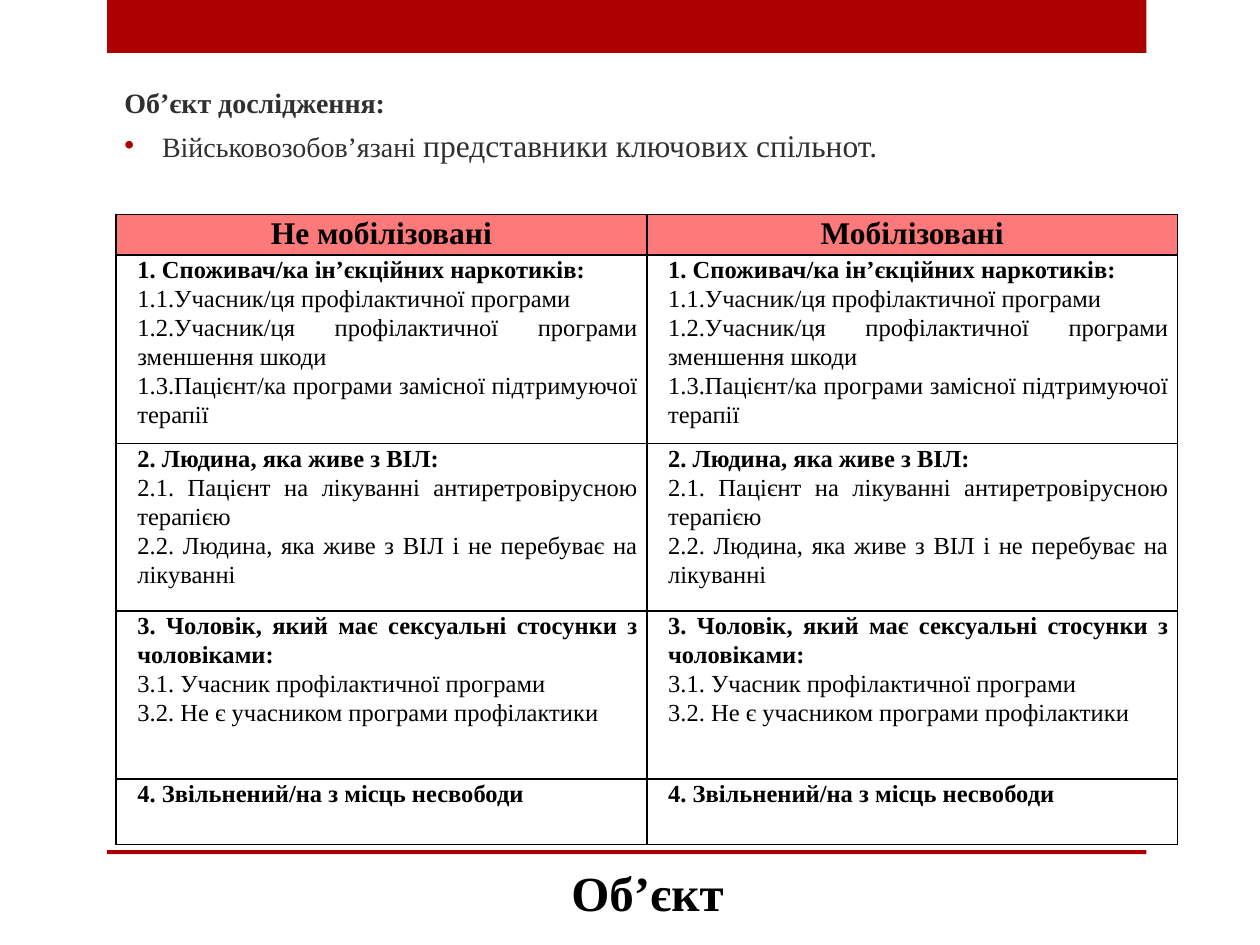
from typing import NamedTuple

from lxml import etree
from pptx import Presentation
from pptx.dml.color import RGBColor
from pptx.enum.shapes import MSO_SHAPE
from pptx.enum.text import MSO_ANCHOR, PP_ALIGN
from pptx.oxml.ns import qn
from pptx.util import Cm, Pt

RECT = MSO_SHAPE.RECTANGLE
MID, LOW = MSO_ANCHOR.MIDDLE, MSO_ANCHOR.BOTTOM
MITTE, BLOCK = PP_ALIGN.CENTER, PP_ALIGN.JUSTIFY
FONT = "Times New Roman"
RED, PINK, BLACK, GREY = "AD0101", "FE7979", "000000", "303030"


class Box(NamedTuple):
    left: float
    top: float
    width: float
    height: float

    def place(self) -> list[Cm]:
        return [Cm(v) for v in self]


class Group(NamedTuple):
    height: float
    head: str
    items: tuple[str, ...] = ()


BARS = (Box(2.16, 0, 20.95, 1.07), Box(2.16, 17.14, 20.95, 0.08))
TITLE = Box(0.71, 16.92, 24.69, 1.78)
INTRO = Box(2.26, 1.12, 21.06, 2.79)
GRID = Box(2.34, 4.32, 21.4, 11.69)
HEADS = ("Не мобілізовані", "Мобілізовані")
HEAD_H = 0.79
GROUPS = (
    Group(2.82, "1. Споживач/ка ін’єкційних наркотиків: ", (
        "1.1.Учасник/ця профілактичної програми ",
        "1.2.Учасник/ця профілактичної програми зменшення шкоди",
        "1.3.Пацієнт/ка програми замісної підтримуючої терапії")),
    Group(3.38, "2. Людина, яка живе з ВІЛ: ", (
        "2.1. Пацієнт на лікуванні антиретровірусною терапією ",
        "2.2. Людина, яка живе з ВІЛ і не перебуває на лікуванні")),
    Group(3.38, "3. Чоловік, який має сексуальні стосунки з чоловіками:", (
        "3.1. Учасник профілактичної програми",
        "3.2. Не є учасником програми профілактики ")),
    Group(1.32, "4. Звільнений/на з місць несвободи"),
)


def color(code: str) -> RGBColor:
    return RGBColor.from_string(code)


def add_sub(node, tag: str, **attrs: str):
    return etree.SubElement(node, qn(tag), attrs)


def indent(para, left: float, first: float = 0) -> None:
    props = para._p.get_or_add_pPr()
    props.set("marL", str(Cm(left)))
    props.set("indent", str(Cm(first)))


def add_bullet(para, mark: str, code: str) -> None:
    props = para._p.get_or_add_pPr()
    add_sub(add_sub(props, "a:buClr"), "a:srgbClr", val=code)
    add_sub(props, "a:buFont", typeface="Arial")
    add_sub(props, "a:buChar", char=mark)


def write(para, text: str, *, size: float, bold: bool = False,
          code: str = BLACK, align=BLOCK) -> None:
    para.alignment = align
    run = para.add_run()
    run.text = text
    font = run.font
    font.name, font.size, font.bold = FONT, Pt(size), bold
    font.color.rgb = color(code)


def add_bar(slide, box: Box) -> None:
    bar = slide.shapes.add_shape(RECT, *box.place())
    bar.shadow.inherit = False
    bar.fill.solid()
    bar.fill.fore_color.rgb = color(RED)
    bar.line.fill.background()


def add_frame(slide, box: Box, anchor):
    frame = slide.shapes.add_textbox(*box.place()).text_frame
    frame.word_wrap = True
    frame.vertical_anchor = anchor
    return frame


def style_cell(cell, fill: str = "") -> None:
    cell.margin_left = cell.margin_right = Cm(0.18)
    cell.margin_top = cell.margin_bottom = 0
    if fill:
        cell.fill.solid()
        cell.fill.fore_color.rgb = color(fill)
    else:
        cell.fill.background()
    props = cell._tc.get_or_add_tcPr()
    for spot, side in enumerate(("a:lnL", "a:lnR", "a:lnT", "a:lnB")):
        line = add_sub(props, side, w=str(Pt(1)))
        add_sub(add_sub(line, "a:solidFill"), "a:srgbClr", val=BLACK)
        props.insert(spot, line)


def fill_group(cell, group: Group) -> None:
    style_cell(cell)
    frame = cell.text_frame
    for i, text in enumerate((group.head, *group.items)):
        para = frame.add_paragraph() if i else frame.paragraphs[0]
        indent(para, 0.25)
        para.line_spacing = 1.07
        write(para, text, size=14, bold=i == 0)


def add_grid(slide) -> None:
    table = slide.shapes.add_table(
        len(GROUPS) + 1, len(HEADS), *GRID.place()).table
    table.horz_banding = False
    table.rows[0].height = Cm(HEAD_H)
    for row, group in enumerate(GROUPS, 1):
        table.rows[row].height = Cm(group.height)
    for col, head in enumerate(HEADS):
        table.columns[col].width = Cm(GRID.width / len(HEADS))
        cell = table.cell(0, col)
        style_cell(cell, PINK)
        para = cell.text_frame.paragraphs[0]
        para.line_spacing, para.space_after = 1.07, Pt(8)
        write(para, head, size=18, bold=True, align=MITTE)
        for row, group in enumerate(GROUPS, 1):
            fill_group(table.cell(row, col), group)


def main() -> None:
    deck = Presentation()
    deck.slide_width, deck.slide_height = Cm(25.4), Cm(19.05)
    slide = deck.slides.add_slide(deck.slide_layouts[6])

    # Red bars
    for box in BARS:
        add_bar(slide, box)

    # Title at the foot
    title = add_frame(slide, TITLE, LOW)
    write(title.paragraphs[0], "Об’єкт", size=28, bold=True, align=MITTE)

    # Object of study
    intro = add_frame(slide, INTRO, MID)
    write(intro.paragraphs[0], "Об’єкт дослідження:",
          size=16, bold=True, code=GREY)
    point = intro.add_paragraph()
    indent(point, 0.76, -0.76)
    add_bullet(point, "•", RED)
    point.space_before = Pt(3.6)
    write(point, "Військовозобов’язані ", size=16, code=GREY)
    write(point, "представники ключових спільнот. ", size=18, code=GREY)

    # Table of groups
    add_grid(slide)
    deck.save("out.pptx")


if __name__ == "__main__":
    main()
